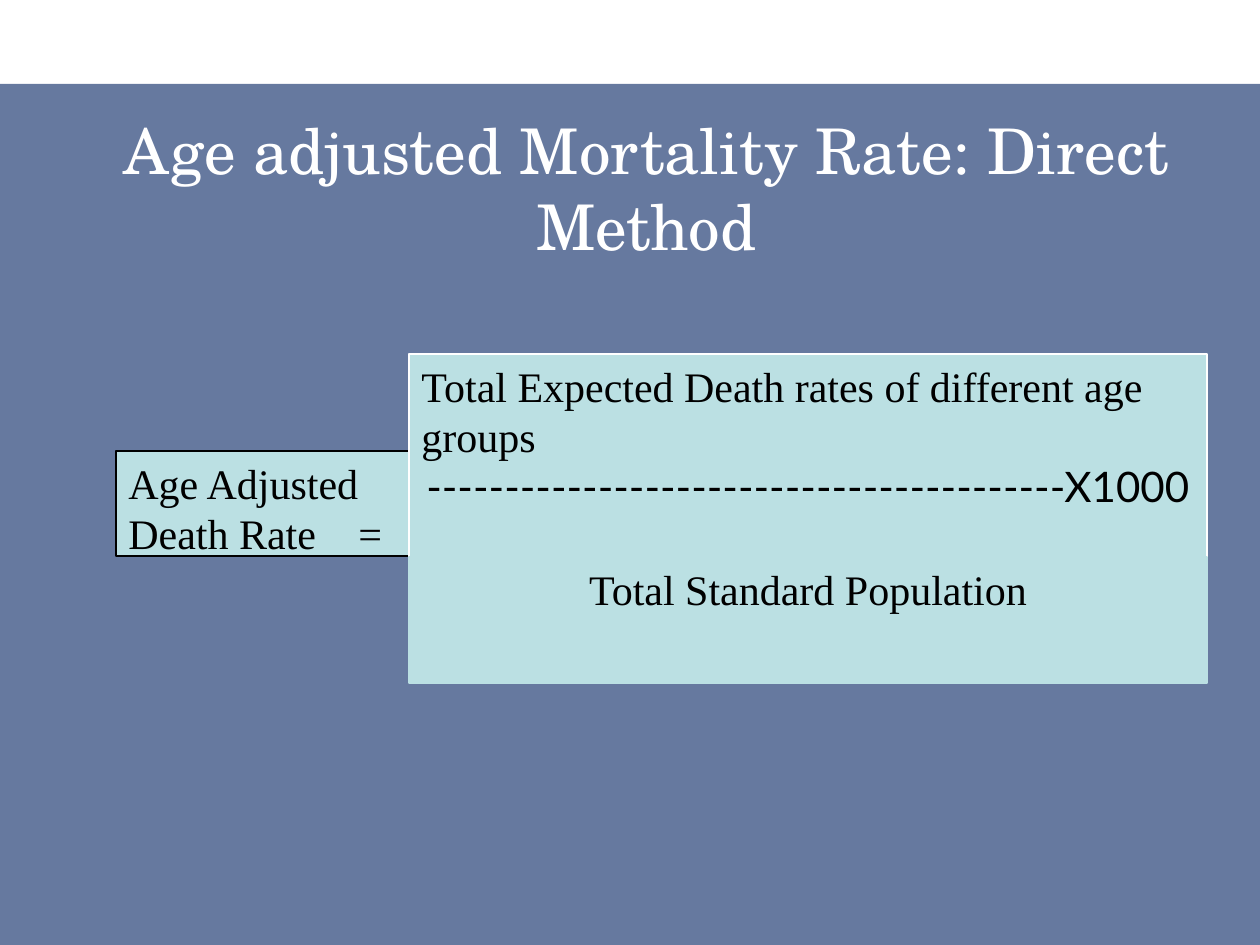
import pptx
import pptx.util
import pptx.dml.color
import pptx.enum.shapes
import pptx.enum.text
import pptx.oxml
from pptx.oxml.ns import qn

PX = 914400 / 126
SERIF, SANS, HEADING = "Times New Roman", "Lato", "TeX Gyre Schola"
LEFT = pptx.enum.text.PP_ALIGN.LEFT
CENTER = pptx.enum.text.PP_ALIGN.CENTER
TOP = pptx.enum.text.MSO_ANCHOR.TOP
MIDDLE = pptx.enum.text.MSO_ANCHOR.MIDDLE

# Content: paragraphs are (text, font, alignment)
TITLE = "Age adjusted Mortality Rate: Direct Method"
TITLE_BOX = (111, 101, 1071, 172)
BACKDROP = (0, 84, 1260, 861)
EQUALS_TAB = 230
FORMULA = [  # box, line colour, paragraphs
    ((116, 451, 293, 105), "000000",
     [("Age Adjusted Death Rate\t=", SERIF, LEFT)]),
    ((409, 354, 798, 203), "FFFFFF",
     [("Total Expected Death rates of different age groups", SERIF, LEFT),
      ("-" * 41 + "X1000", SANS, CENTER)]),
    ((409, 557, 798, 126), "BBE0E3",
     [("Total Standard Population", SERIF, CENTER)]),
]


def px(n):
    return pptx.util.Emu(round(n * PX))


def rgb(color):
    return pptx.dml.color.RGBColor.from_string(color)


def add_rect(box, fill, line=None):
    sp = slide.shapes.add_shape(
        pptx.enum.shapes.MSO_SHAPE.RECTANGLE, *map(px, box))
    sp.shadow.inherit = False
    sp.fill.solid()
    sp.fill.fore_color.rgb = rgb(fill)
    if line:
        sp.line.color.rgb = rgb(line)
        sp.line.width = pptx.util.Pt(0.75)
    else:
        sp.line.fill.background()
    return sp


def add_tab(p, position):
    tabs = pptx.oxml.parse_xml(
        '<a:tabLst xmlns:a="http://schemas.openxmlformats.org/drawingml/2006/main">'
        f'<a:tab pos="{px(position)}" algn="l"/></a:tabLst>')
    p._p.get_or_add_pPr().append(tabs)


def write(sp, paragraphs, size, color, anchor):
    tf = sp.text_frame
    tf.word_wrap = True
    tf.vertical_anchor = anchor
    for i, (text, font, align) in enumerate(paragraphs):
        p = tf.paragraphs[0] if i == 0 else tf.add_paragraph()
        p.text = text
        p.alignment = align
        if "\t" in text:
            add_tab(p, EQUALS_TAB)
        p.font.name = font
        p.font.size = pptx.util.Pt(size)
        p.font.color.rgb = rgb(color)


prs = pptx.Presentation()
prs.slide_width, prs.slide_height = px(1260), px(945)
slide = prs.slides.add_slide(prs.slide_layouts[6])

# Translucent backdrop
backdrop = add_rect(BACKDROP, "002060")
navy = backdrop._element.spPr.find(qn("a:solidFill"))[0]
navy.append(navy.makeelement(qn("a:alpha"), {"val": "60000"}))

# Title
title = slide.shapes.add_textbox(*map(px, TITLE_BOX))
write(title, [(TITLE, HEADING, CENTER)], 36, "FFFFFF", MIDDLE)

# Formula boxes
for box, line, paragraphs in FORMULA:
    write(add_rect(box, "BBE0E3", line), paragraphs, 24, "000000", TOP)

prs.save("out.pptx")
